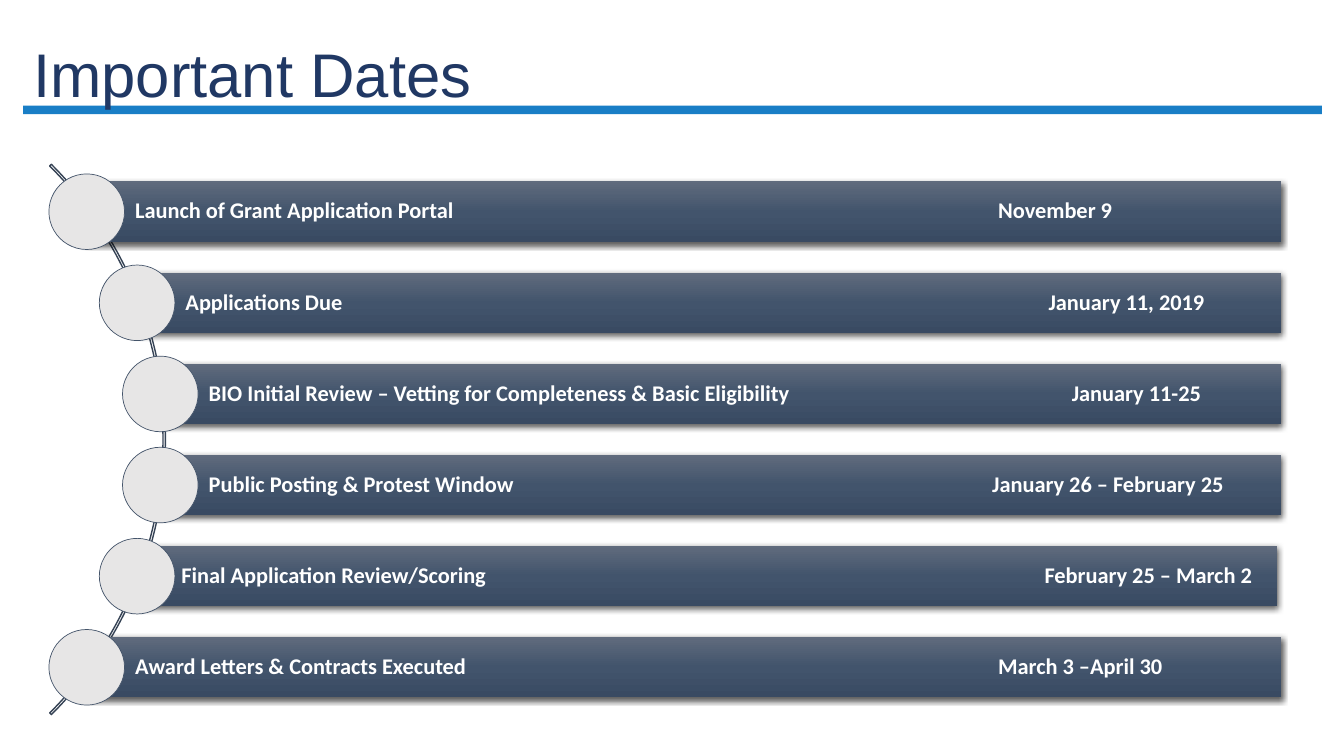
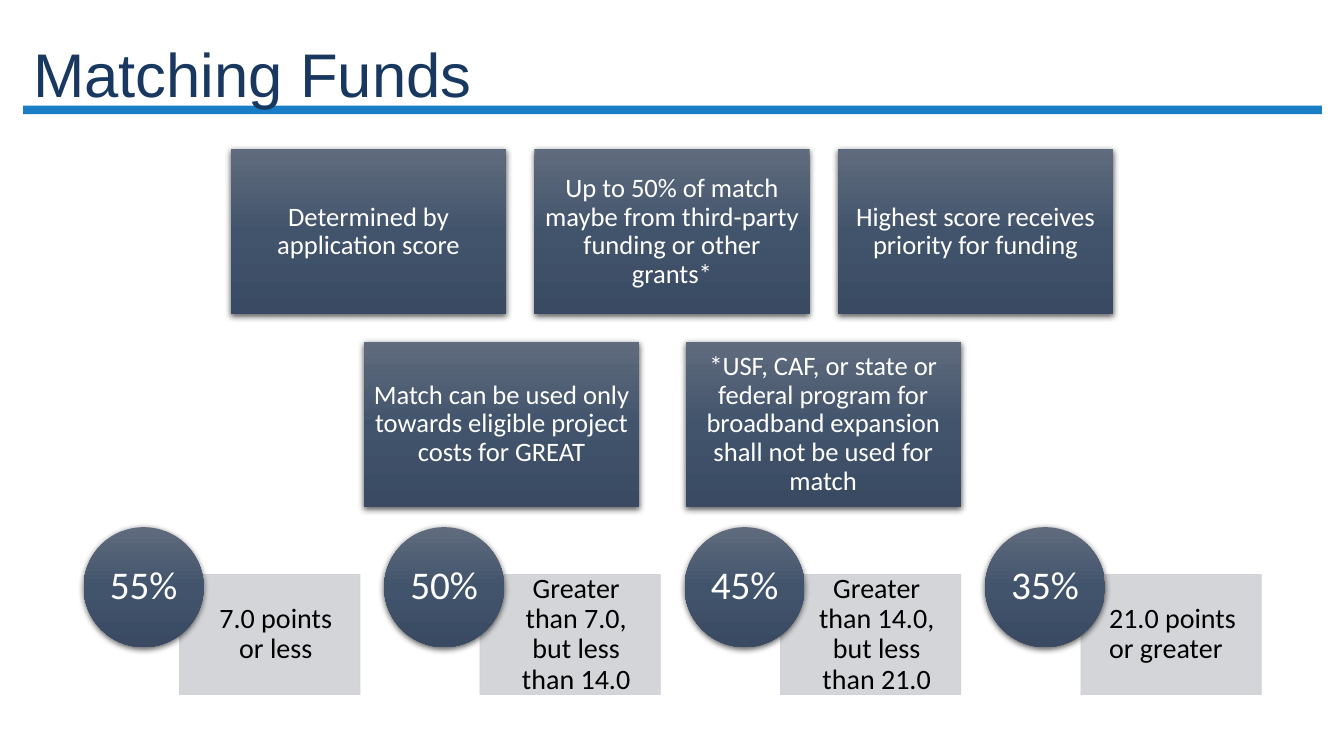
"""Build two grant program slides: a timeline of dates and the matching funds rules."""
from dataclasses import dataclass

from lxml import etree
from pptx import Presentation
from pptx.dml.color import RGBColor
from pptx.enum.shapes import MSO_CONNECTOR, MSO_SHAPE
from pptx.enum.text import MSO_ANCHOR, MSO_AUTO_SIZE, PP_ALIGN
from pptx.oxml import parse_xml
from pptx.oxml.ns import nsdecls, qn
from pptx.util import Inches, Pt


@dataclass(frozen=True)
class Theme:
    """Colours, fonts and type sizes shared by the slides."""
    title_blue: str = "203864"
    title_navy: str = "183860"
    rule: str = "0070C0"
    arc: str = "364355"
    marker: str = "E7E6E6"
    marker_line: str = "44546A"
    label: str = "CFD1D4"
    white: str = "FFFFFF"
    black: str = "000000"
    gradient: tuple = ((0, "606B7D"), (50, "42546C"), (100, "394A62"))
    title_font: str = "Arial"
    body_font: str = "Calibri"
    title_size: int = 44
    date_size: int = 16
    tile_size: int = 19
    label_size: int = 20
    badge_size: int = 28


THEME = Theme()

DATE_TAB = 8.56
BAR_RIGHT, BAR_HEIGHT, MARKER_SIZE = 12.71, 0.6, 0.75
FIRST_BAR_TOP, LAST_BAR_TOP = 1.8, 6.32
MILESTONES = [
    ("Launch of Grant Application Portal", "November 9", 0.86, 0, DATE_TAB),
    ("Applications Due", "January 11, 2019", 1.36, 0, DATE_TAB),
    ("BIO Initial Review – Vetting for Completeness & Basic Eligibility",
     "January 11-25", 1.59, 0, DATE_TAB),
    ("Public Posting & Protest Window", "January 26 – February 25", 1.59, 0, 7.77),
    ("Final Application Review/Scoring", "February 25 – March 2", 1.36, -0.04, DATE_TAB),
    ("Award Letters & Contracts Executed", "March 3 –April 30", 0.86, 0, DATE_TAB),
]

TILE_WIDTH, TILE_HEIGHT = 2.73, 1.64
TILE_ROWS = [
    (2.29, 1.48, 3.01, [
        "Determined by application score",
        "Up to 50% of match maybe from third-party funding or other grants*",
        "Highest score receives priority for funding",
    ]),
    (3.61, 3.39, 3.19, [
        "Match can be used only towards eligible project costs for GREAT",
        "*USF, CAF, or state or federal program for broadband expansion "
        "shall not be used for match",
    ]),
]

BADGE_LEFT, BADGE_TOP, BADGE_SIZE = 0.83, 5.23, 1.19
BADGE_STEP = 2.98
LABEL_WIDTH, LABEL_SHIFT_X, LABEL_SHIFT_Y = 1.79, 0.95, 0.47
MATCH_LEVELS = [
    ("55%", "7.0 points or less", PP_ALIGN.CENTER),
    ("50%", "Greater than 7.0, but less than 14.0", PP_ALIGN.CENTER),
    ("45%", "Greater than 14.0, but less than 21.0", PP_ALIGN.CENTER),
    ("35%", "21.0 points or greater", PP_ALIGN.LEFT),
]


def color(value):
    return RGBColor.from_string(value)


def make_translucent(shape, percent):
    for node in shape.element.spPr.iter(qn("a:srgbClr")):
        etree.SubElement(node, qn("a:alpha"), val=str(percent * 1000))


def write(shape, text, font, size, text_color, align, insets=None, bold=False):
    frame = shape.text_frame
    frame.text = text
    frame.word_wrap = True
    frame.auto_size = MSO_AUTO_SIZE.NONE
    frame.vertical_anchor = MSO_ANCHOR.MIDDLE
    if insets:
        (frame.margin_left, frame.margin_top,
         frame.margin_right, frame.margin_bottom) = map(Inches, insets)
    paragraph = frame.paragraphs[0]
    paragraph.alignment = align
    paragraph.line_spacing = 0.9
    for run in paragraph.runs:
        run.font.name = font
        run.font.size = Pt(size)
        run.font.bold = bold
        run.font.color.rgb = color(text_color)
    return paragraph


def add_plain(slide, kind, left, top, width, height, fill=None, line=None, line_width=0.5):
    shape = slide.shapes.add_shape(kind, *map(Inches, (left, top, width, height)))
    shape.shadow.inherit = False
    if fill:
        shape.fill.solid()
        shape.fill.fore_color.rgb = color(fill)
    else:
        shape.fill.background()
    if line:
        shape.line.color.rgb = color(line)
        shape.line.width = Pt(line_width)
    else:
        shape.line.fill.background()
    return shape


def add_raised(slide, kind, left, top, width, height):
    shape = add_plain(slide, kind, left, top, width, height)
    properties = shape.element.spPr
    stops = "".join(
        f'<a:gs pos="{position * 1000}"><a:srgbClr val="{value}"/></a:gs>'
        for position, value in THEME.gradient)
    gradient = parse_xml(
        f'<a:gradFill {nsdecls("a")} rotWithShape="1"><a:gsLst>{stops}</a:gsLst>'
        '<a:lin ang="5400000" scaled="0"/></a:gradFill>')
    properties.replace(properties.find(qn("a:noFill")), gradient)
    properties.find(qn("a:effectLst")).append(parse_xml(
        f'<a:outerShdw {nsdecls("a")} blurRad="{Pt(4.5)}" dist="{Pt(1.5)}" dir="5400000" '
        f'algn="ctr" rotWithShape="0"><a:srgbClr val="{THEME.black}">'
        '<a:alpha val="63000"/></a:srgbClr></a:outerShdw>'))
    return shape


def add_title_rule(slide):
    rule = slide.shapes.add_connector(
        MSO_CONNECTOR.STRAIGHT, Inches(0.23), Inches(1.09), Inches(13.11), Inches(1.09))
    rule.line.color.rgb = color(THEME.rule)
    rule.line.width = Pt(6)
    make_translucent(rule, 90)
    etree.SubElement(rule.element.spPr, qn("a:effectLst"))
    rule.element.nvCxnSpPr.cNvPr.set("id", "99")
    slide.slide_layout.shapes.element.append(rule.element)


def add_slide(presentation, title_text, title_color):
    slide = presentation.slides.add_slide(presentation.slide_layouts[5])
    title = slide.shapes.title
    title.left, title.top, title.width, title.height = map(Inches, (0.23, 0.4, 12.18, 0.74))
    write(title, title_text, THEME.title_font, THEME.title_size, title_color, PP_ALIGN.LEFT)
    return slide


def add_timeline(slide):
    arc = add_plain(slide, MSO_SHAPE.BLOCK_ARC, -6.08, 0.5, 7.72, 7.72,
                    line=THEME.arc, line_width=1)
    for index, value in enumerate((189, 27, 0.003)):
        arc.adjustments[index] = value
    step = (LAST_BAR_TOP - FIRST_BAR_TOP) / (len(MILESTONES) - 1)
    for index, (name, date, center, shift, tab) in enumerate(MILESTONES):
        top = FIRST_BAR_TOP + index * step
        bar = add_raised(slide, MSO_SHAPE.RECTANGLE, center + shift, top,
                         BAR_RIGHT - center, BAR_HEIGHT)
        paragraph = write(bar, f"{name}\t{date}", THEME.body_font, THEME.date_size,
                          THEME.white, PP_ALIGN.LEFT, (0.48, 0.04, 0.04, 0.04), bold=True)
        tabs = etree.SubElement(paragraph._p.get_or_add_pPr(), qn("a:tabLst"))
        etree.SubElement(tabs, qn("a:tab"), pos=str(Inches(tab)), algn="l")
        add_plain(slide, MSO_SHAPE.OVAL, center - MARKER_SIZE / 2,
                  top + (BAR_HEIGHT - MARKER_SIZE) / 2, MARKER_SIZE, MARKER_SIZE,
                  THEME.marker, THEME.marker_line)


def add_tiles(slide):
    for left, top, step, texts in TILE_ROWS:
        for index, text in enumerate(texts):
            tile = add_raised(slide, MSO_SHAPE.RECTANGLE, left + index * step, top,
                              TILE_WIDTH, TILE_HEIGHT)
            write(tile, text, THEME.body_font, THEME.tile_size, THEME.white,
                  PP_ALIGN.CENTER, (0.08,) * 4)


def add_match_levels(slide):
    for index, (percent, points, align) in enumerate(MATCH_LEVELS):
        left = BADGE_LEFT + index * BADGE_STEP
        label = add_plain(slide, MSO_SHAPE.RECTANGLE, left + LABEL_SHIFT_X,
                          BADGE_TOP + LABEL_SHIFT_Y, LABEL_WIDTH, BADGE_SIZE,
                          THEME.label, THEME.label)
        make_translucent(label, 90)
        write(label, points, THEME.body_font, THEME.label_size, THEME.black,
              align, (0.28, 0.16, 0.16, 0.16))
        badge = add_raised(slide, MSO_SHAPE.OVAL, left, BADGE_TOP, BADGE_SIZE, BADGE_SIZE)
        write(badge, percent, THEME.body_font, THEME.badge_size, THEME.white,
              PP_ALIGN.CENTER, (0,) * 4)


def main():
    presentation = Presentation()
    presentation.slide_width = Inches(13.33)
    presentation.slide_height = Inches(7.5)
    dates = add_slide(presentation, "Important Dates", THEME.title_blue)
    add_title_rule(dates)
    add_timeline(dates)
    funds = add_slide(presentation, "Matching Funds", THEME.title_navy)
    add_tiles(funds)
    add_match_levels(funds)
    presentation.save("out.pptx")


if __name__ == "__main__":
    main()
